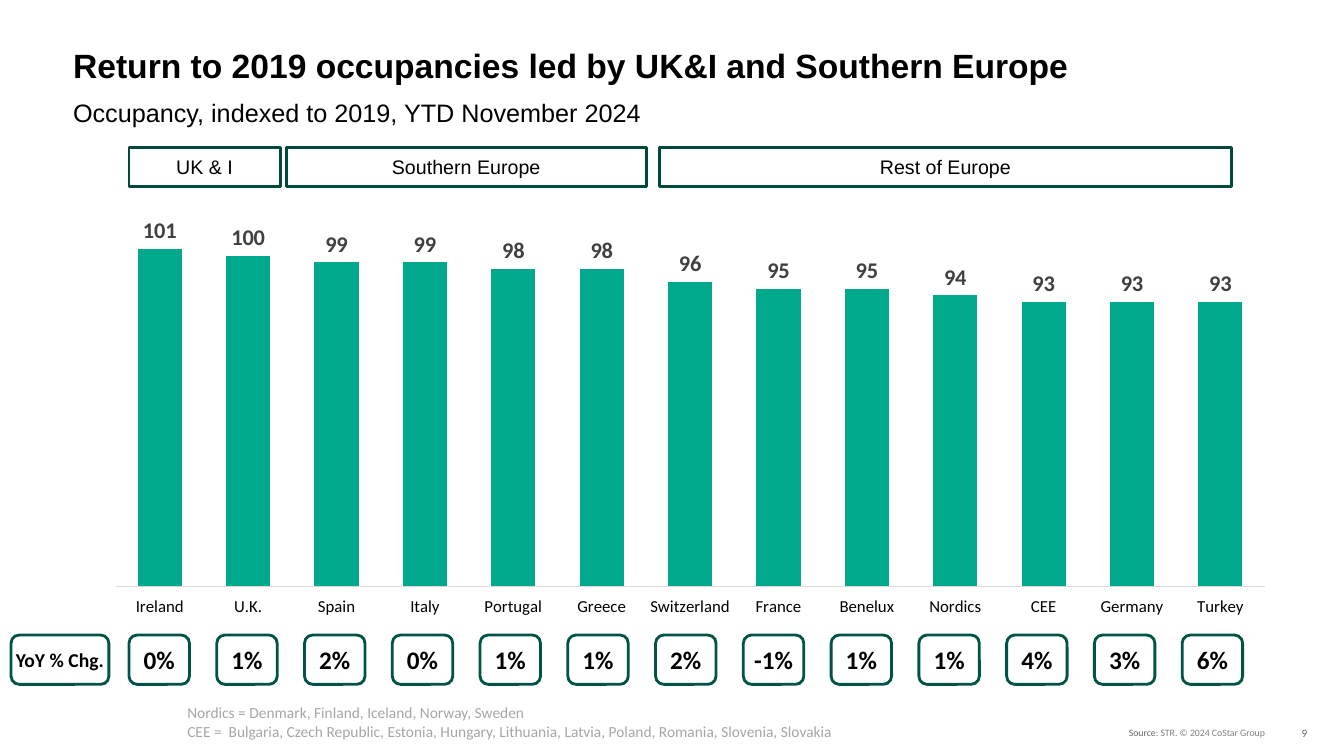
from lxml.etree import SubElement
from pptx import Presentation
from pptx.chart.data import CategoryChartData
from pptx.dml.color import RGBColor
from pptx.enum.chart import XL_CHART_TYPE, XL_LABEL_POSITION, XL_TICK_LABEL_POSITION, XL_TICK_MARK
from pptx.enum.shapes import MSO_SHAPE
from pptx.enum.text import MSO_ANCHOR, PP_ALIGN
from pptx.oxml.ns import qn
from pptx.util import Inches, Pt

OCCUPANCY = {
    "Ireland": 101, "U.K.": 100, "Spain": 99, "Italy": 99, "Portugal": 98,
    "Greece": 98, "Switzerland": 96, "France": 95, "Benelux": 95,
    "Nordics": 94, "CEE": 93, "Germany": 93, "Turkey": 93,
}
YOY_CHANGES = ["0%", "1%", "2%", "0%", "1%", "1%", "2%",
               "-1%", "1%", "1%", "4%", "3%", "6%"]
REGIONS = [("UK & I", 9.6, 11.25), ("Southern Europe", 21.3, 26.78),
           ("Rest of Europe", 49.05, 42.6)]


def rgb(value):
    return RGBColor.from_string(value)


class SlideBuilder:
    """Places elements on a grid of 100 columns by 100 rows."""
    HEAD, BODY = "Arial", "Calibri"
    BLACK, WHITE, BAR = "000000", "FFFFFF", "00A88C"
    BAND_LINE, CHIP_LINE = "004A3D", "005446"

    def __init__(self, prs):
        self.s = prs.slides.add_slide(prs.slide_layouts[6])
        self.col = prs.slide_width / 100
        self.row = prs.slide_height / 100

    def box(self, x, y, w, h):
        return (round(x * self.col), round(y * self.row),
                round(w * self.col), round(h * self.row))

    def style(self, font, size, color, name, bold=False):
        font.name, font.size, font.bold = name, Pt(size), bold
        font.color.rgb = rgb(color)

    def text(self, area, lines, size, color=BLACK, name=BODY, bold=False,
             anchor=MSO_ANCHOR.TOP, spacing=None):
        tf = self.s.shapes.add_textbox(*self.box(*area)).text_frame
        tf.word_wrap = True
        tf.vertical_anchor = anchor
        tf.text = "\n".join(lines)
        for p in tf.paragraphs:
            if spacing:
                p.line_spacing = Pt(spacing)
            for r in p.runs:
                self.style(r.font, size, color, name, bold)
        return tf

    def label(self, kind, area, text, line, size, name, bold=False, wrap=True):
        sp = self.s.shapes.add_shape(kind, *self.box(*area))
        sp.shadow.inherit = False
        sp.fill.solid()
        sp.fill.fore_color.rgb = rgb(self.WHITE)
        sp.line.color.rgb = rgb(line)
        sp.line.width = Pt(2)
        tf = sp.text_frame
        tf.word_wrap = wrap
        tf.vertical_anchor = MSO_ANCHOR.MIDDLE
        tf.text = text
        p = tf.paragraphs[0]
        p.alignment = PP_ALIGN.CENTER
        self.style(p.runs[0].font, size, self.BLACK, name, bold)

    def band(self, text, x, w):
        self.label(MSO_SHAPE.RECTANGLE, (x, 19.47, w, 5.2), text,
                   self.BAND_LINE, 14, self.HEAD)

    def chip(self, text, x, w=4.5, size=18):
        self.label(MSO_SHAPE.ROUNDED_RECTANGLE, (x, 84, w, 6.53), text,
                   self.CHIP_LINE, size, self.BODY, bold=True, wrap=False)

    def column_chart(self, area, values, plot_area):
        data = CategoryChartData()
        data.categories = list(values)
        data.add_series("Series 1", list(values.values()))
        chart = self.s.shapes.add_chart(
            XL_CHART_TYPE.COLUMN_CLUSTERED, *self.box(*area), data).chart
        chart.has_legend = chart.has_title = False
        self.style(chart.font, 10, self.BLACK, self.BODY)

        # Axes
        cat, val = chart.category_axis, chart.value_axis
        cat.major_tick_mark = cat.minor_tick_mark = XL_TICK_MARK.NONE
        cat.tick_label_position = XL_TICK_LABEL_POSITION.LOW
        cat.format.line.color.rgb = rgb("D9D9D9")
        cat.format.line.width = Pt(0.75)
        self.style(cat.tick_labels.font, 12, self.BLACK, self.BODY)
        val.minimum_scale, val.maximum_scale = 50, 110
        val.has_major_gridlines = False
        val.tick_labels.number_format = "0.0"
        val.tick_labels.number_format_is_linked = False
        val.visible = False

        # Columns and their values
        plot = chart.plots[0]
        plot.gap_width, plot.overlap = 100, -27
        plot.vary_by_categories = False
        fill = plot.series[0].format.fill
        fill.solid()
        fill.fore_color.rgb = rgb(self.BAR)
        plot.has_data_labels = True
        labels = plot.data_labels
        labels.show_value = True
        labels.position = XL_LABEL_POSITION.OUTSIDE_END
        labels.number_format = "#,##0"
        labels.number_format_is_linked = False
        self.style(labels.font, 16, "404040", self.BODY, True)

        # Fixed inner plot area
        plot_el = chart.element.find(".//" + qn("c:plotArea"))
        layout = plot_el.find(qn("c:layout"))
        if layout is None:
            layout = SubElement(plot_el, qn("c:layout"))
            plot_el.insert(0, layout)
        manual = SubElement(layout, qn("c:manualLayout"))
        settings = [("layoutTarget", "inner"), ("xMode", "edge"), ("yMode", "edge")]
        for tag, value in settings + list(zip("xywh", plot_area)):
            SubElement(manual, qn("c:" + tag)).set("val", str(value))


def main():
    prs = Presentation()
    prs.slide_width, prs.slide_height = Inches(13.33), Inches(7.5)
    b = SlideBuilder(prs)

    # Footer
    source = b.text((83.25, 95.47, 12.2, 2.93),
                    ["Source: STR. © 2024 CoStar Group"], 7, "808080")
    p = source.paragraphs[0]
    p.text = "Source"
    p.add_run().text = ": STR. © 2024 CoStar Group"
    for r, color in zip(p.runs, ("666666", "808080")):
        b.style(r.font, 7, color, b.BODY)
    b.text((96.1, 95.6, 3.2, 2.67), ["9"], 8, "666666", anchor=MSO_ANCHOR.MIDDLE)

    # Chart
    b.column_chart((5, 22.5, 90, 64.8), OCCUPANCY, (0.04, 0.04, 0.95, 0.81))

    # Headings
    b.text((4.7, 6.27, 86.9, 5.07),
           ["Return to 2019 occupancies led by UK&I and Southern Europe"],
           24, name=b.HEAD, bold=True, anchor=MSO_ANCHOR.MIDDLE, spacing=26.7)
    b.text((4.7, 11.33, 90.1, 4.53), ["Occupancy, indexed to 2019, YTD November 2024"],
           18, name=b.HEAD, spacing=26.7)

    # Definitions
    b.text((13.2, 92.4, 52.4, 6.27),
           ["Nordics = Denmark, Finland, Iceland, Norway, Sweden",
            "CEE =  Bulgaria, Czech Republic, Estonia, Hungary, Lithuania, "
            "Latvia, Poland, Romania, Slovenia, Slovakia"], 11, "A6A6A6")

    # Region bands
    for name, x, w in REGIONS:
        b.band(name, x, w)

    # Year-on-year row
    b.chip("YoY % Chg.", 0.82, w=7.28, size=14)
    for i, change in enumerate(YOY_CHANGES):
        b.chip(change, 9.6 + 6.53 * i)

    prs.save("out.pptx")


if __name__ == "__main__":
    main()
